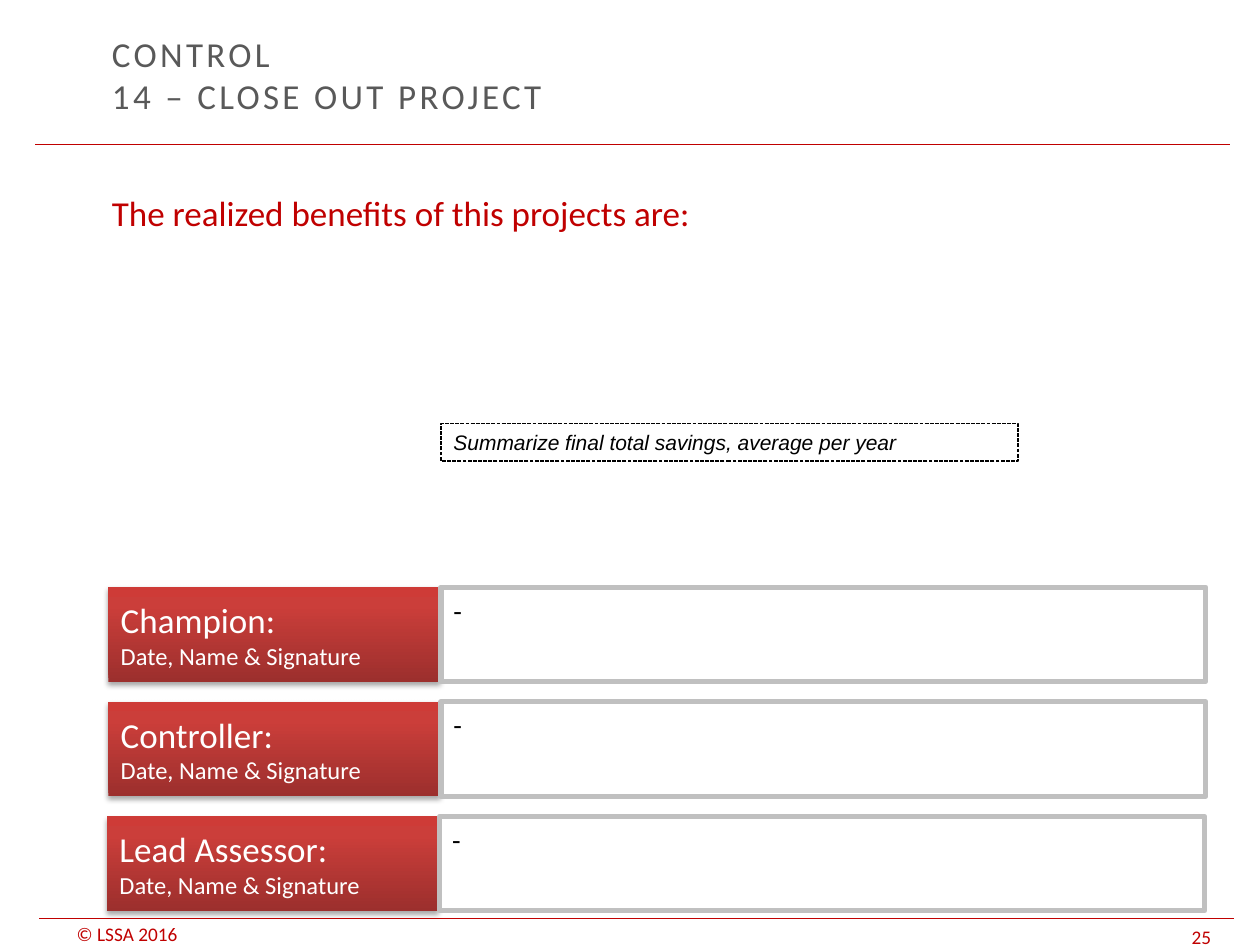
from dataclasses import dataclass

from pptx import Presentation
from pptx.dml.color import RGBColor
from pptx.enum.dml import MSO_LINE
from pptx.enum.shapes import MSO_CONNECTOR, MSO_SHAPE
from pptx.enum.text import MSO_ANCHOR, PP_ALIGN
from pptx.oxml import parse_xml
from pptx.oxml.ns import nsdecls
from pptx.util import Inches, Pt

SLIDE_WIDTH, SLIDE_HEIGHT = Inches(10), Inches(7.5)
RED, GREY, SILVER, WHITE, BLACK = "C00000", "595959", "C0C0C0", "FFFFFF", "000000"
LABEL_STOPS = ((0, "9C2F2D"), (80, "CB3E3A"), (100, "CE3B37"))
FIRST_ROW, ROW_PITCH, ROW_HEIGHT = 62.13, 12.13, 10


@dataclass(frozen=True)
class Area:
    """A rectangle in percent of the slide's width and height."""
    left: float
    top: float
    width: float
    height: float

    def lengths(self) -> tuple:
        """Return left, top, width and height as slide lengths."""
        return (across(self.left), down(self.top),
                across(self.width), down(self.height))


@dataclass(frozen=True)
class Line:
    """A line of text with its look."""
    text: str
    size: float
    color: str
    font: str = "Calibri"
    italic: bool = False
    tracking: int = 0


@dataclass(frozen=True)
class Signatory:
    """A sign-off row: the role and the left edge of its label."""
    role: str
    left: float


SIGNATORIES = (
    Signatory("Champion:", 8.6),
    Signatory("Controller:", 8.6),
    Signatory("Lead Assessor:", 8.5),
)


def across(share: float) -> int:
    """Turn a percentage of the slide's width into a length."""
    return round(SLIDE_WIDTH * share / 100)


def down(share: float) -> int:
    """Turn a percentage of the slide's height into a length."""
    return round(SLIDE_HEIGHT * share / 100)


def rgb(color: str) -> RGBColor:
    """Turn a hex string into a colour."""
    return RGBColor.from_string(color)


def write(shape, lines: list[Line], anchor=MSO_ANCHOR.TOP) -> None:
    """Fill a shape with one left-aligned paragraph per line."""
    frame = shape.text_frame
    frame.word_wrap = True
    frame.vertical_anchor = anchor
    frame.text = "\n".join(line.text for line in lines)
    for para, line in zip(frame.paragraphs, lines):
        para.alignment = PP_ALIGN.LEFT
        for span in para.runs:
            span.font.name = line.font
            span.font.size = Pt(line.size)
            span.font.italic = line.italic
            span.font.color.rgb = rgb(line.color)
            if line.tracking:
                span.font._element.set("spc", str(line.tracking))


def add_text(page, area: Area, lines: list[Line], anchor=MSO_ANCHOR.TOP):
    """Add a text box and return it."""
    box = page.shapes.add_textbox(*area.lengths())
    write(box, lines, anchor)
    return box


def add_footer(page, area: Area, text: str) -> None:
    """Add a small red text that sits on the bottom of its area."""
    frame = add_text(page, area, [Line(text, 11, RED)], MSO_ANCHOR.BOTTOM).text_frame
    frame.margin_top = frame.margin_bottom = 0


def add_rule(page, left: float, top: float, width: float) -> None:
    """Add a thin red horizontal line."""
    rule = page.shapes.add_connector(
        MSO_CONNECTOR.STRAIGHT, across(left), down(top), across(left + width), down(top))
    rule.line.color.rgb = rgb(RED)
    rule.line.width = Pt(0.75)
    rule.element.spPr.append(parse_xml(f"<a:effectLst {nsdecls('a')}/>"))


def add_frame(page, area: Area, line: Line, color: str, width: float):
    """Add a white outlined rectangle with one line of text and return it."""
    box = page.shapes.add_shape(MSO_SHAPE.RECTANGLE, *area.lengths())
    box.shadow.inherit = False
    box.fill.solid()
    box.fill.fore_color.rgb = rgb(WHITE)
    box.line.color.rgb = rgb(color)
    box.line.width = Pt(width)
    write(box, [line])
    return box


def add_label(page, area: Area, role: str) -> None:
    """Add a red gradient label with a soft shadow below it."""
    box = page.shapes.add_shape(MSO_SHAPE.RECTANGLE, *area.lengths())
    box.line.fill.background()
    stops = "".join(
        f'<a:gs pos="{place * 1000}"><a:srgbClr val="{color}"/></a:gs>'
        for place, color in LABEL_STOPS)
    properties = box.element.spPr
    properties.insert(2, parse_xml(
        f'<a:gradFill {nsdecls("a")} rotWithShape="1"><a:gsLst>{stops}</a:gsLst>'
        '<a:lin ang="16200000" scaled="0"/></a:gradFill>'))
    properties.append(parse_xml(
        f'<a:effectLst {nsdecls("a")}><a:outerShdw blurRad="{Pt(3.1)}" dist="{Pt(1.8)}" '
        f'dir="5400000" rotWithShape="0"><a:srgbClr val="{BLACK}">'
        '<a:alpha val="35000"/></a:srgbClr></a:outerShdw></a:effectLst>'))
    write(box, [Line(role, 20, WHITE), Line("Date, Name & Signature", 14, WHITE)],
          MSO_ANCHOR.MIDDLE)


def add_signatory(page, row: int, signatory: Signatory) -> None:
    """Add a label and the field to sign in."""
    top = FIRST_ROW + row * ROW_PITCH
    add_label(page, Area(signatory.left, top, 26.3, ROW_HEIGHT), signatory.role)
    add_frame(page, Area(signatory.left + 26.4, top, 60.7, ROW_HEIGHT),
              Line("-", 16, BLACK), SILVER, 3)


def main() -> None:
    """Build the project close-out slide."""
    deck = Presentation()
    deck.slide_width, deck.slide_height = SLIDE_WIDTH, SLIDE_HEIGHT
    page = deck.slides.add_slide(deck.slide_layouts[6])
    add_footer(page, Area(5.1, 97.6, 14.2, 2.4), "© LSSA 2016")
    add_footer(page, Area(93.6, 97.47, 6.4, 2.93), "25")
    add_rule(page, 2.8, 15.33, 94.8)
    add_rule(page, 3.1, 97.2, 94.8)
    add_text(page, Area(7.9, 3.47, 70.9, 8.8),
             [Line(text, 20, GREY, tracking=190)
              for text in ("CONTROL", "14 – CLOSE OUT PROJECT")], MSO_ANCHOR.MIDDLE)
    add_text(page, Area(7.9, 19.6, 86.6, 73.47),
             [Line("The realized benefits of this projects are:", 20, RED)])
    for row, signatory in enumerate(SIGNATORIES):
        add_signatory(page, row, signatory)
    hint = add_frame(page, Area(35, 44.8, 45.8, 4),
                     Line("Summarize final total savings, average per year", 12, BLACK,
                          "Arial", italic=True), BLACK, 0.75)
    hint.line.dash_style = MSO_LINE.SQUARE_DOT
    deck.save("out.pptx")


if __name__ == "__main__":
    main()
